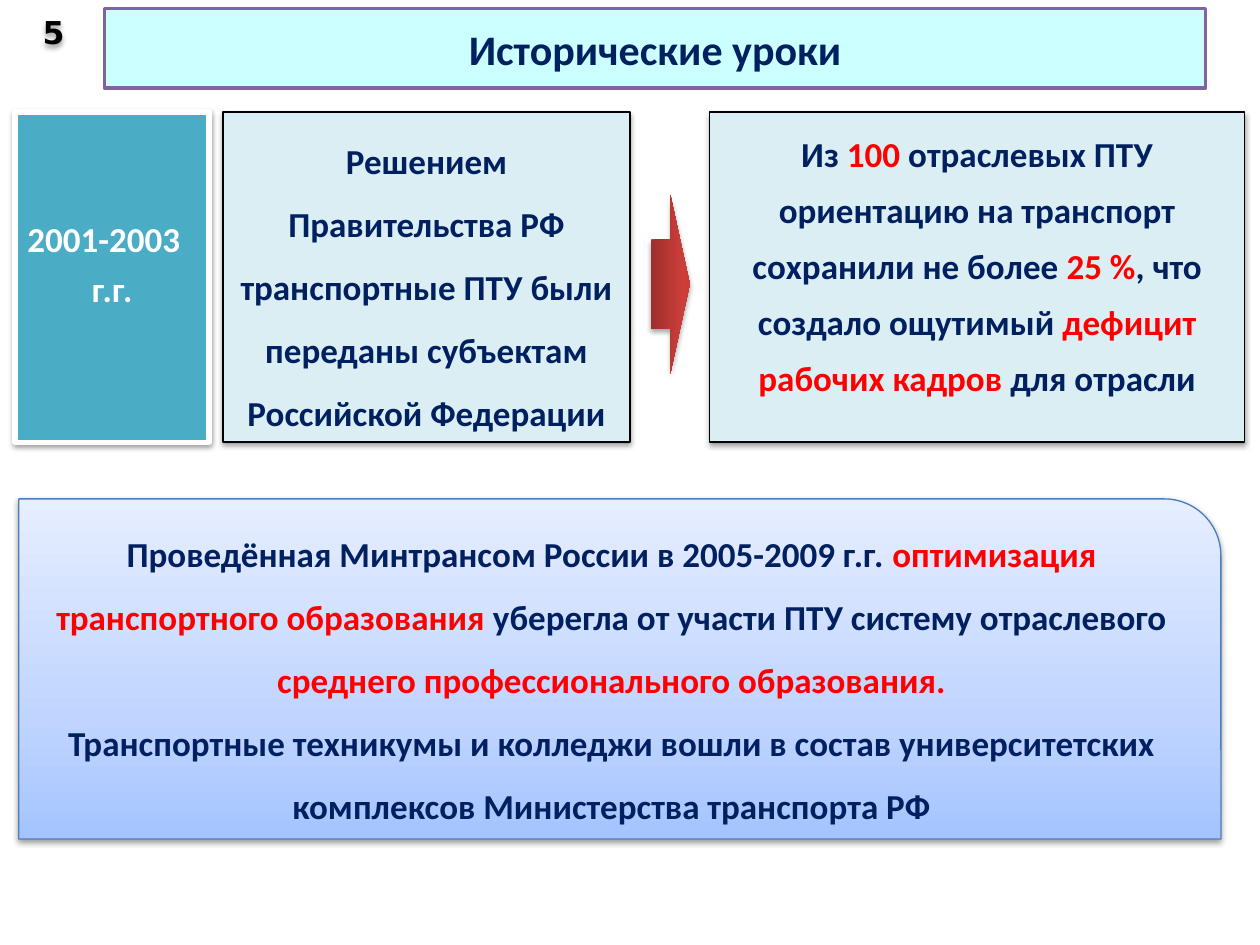
from lxml.etree import SubElement
from pptx import Presentation
from pptx.dml.color import RGBColor
from pptx.enum.shapes import MSO_SHAPE as Shape
from pptx.enum.text import MSO_ANCHOR as Anchor, PP_ALIGN as Align
from pptx.oxml.ns import qn
from pptx.util import Inches, Pt

THEME = {
    "font": "Calibri", "number_font": "DejaVu Sans",
    "title_size": 24, "body_size": 20, "number_size": 18,
    "navy": "002060", "red": "FF0000", "white": "FFFFFF", "black": "000000",
    "title_fill": "CCFFFF", "title_line": "8064A2",
    "year_fill": "4BACC6", "card_fill": "DBEEF4", "summary_line": "4B7EBC",
    "summary_fill": [(0, "A4C4FF"), (35, "BFD4FF"), (100, "E6EEFF")],
    "arrow_fill": [(0, "9C2F2D"), (80, "CB3E3A"), (100, "CE3B37")],
}
WIDTH, HEIGHT = 10, 7.5

COLUMNS = {
    "number": (1.9, 4.7), "title": (8.3, 87.4), "years": (1.2, 15.4),
    "decision": (17.7, 32.3), "arrow": (46.1, 14.2), "outcome": (56.3, 42.5),
    "summary": (1.5, 95.4),
}
ROWS = {
    "number": (0.93, 4.93), "title": (0.93, 8.4), "cards": (11.87, 34.93),
    "arrow": (28, 4.13), "summary": (52.8, 36),
}

TITLE = [[("Исторические уроки", "navy")]]
YEARS = [[("2001-2003", "white")], [("г.г.", "white")]]
DECISION = [[("Решением Правительства РФ транспортные ПТУ были переданы "
              "субъектам Российской Федерации", "navy")]]
OUTCOME = [
    [("Из ", "navy"), ("100 ", "red"),
     ("отраслевых ПТУ ориентацию на транспорт", "navy")],
    [("сохранили не более ", "navy"), ("25 %", "red"),
     (", что создало ощутимый ", "navy"),
     ("дефицит рабочих кадров ", "red"), ("для отрасли", "navy")],
]
SUMMARY = [
    [("Проведённая Минтрансом России в 2005-2009 г.г. ", "navy"),
     ("оптимизация транспортного образования ", "red"),
     ("уберегла от участи ПТУ систему отраслевого ", "navy"),
     ("среднего профессионального образования.", "red")],
    [("Транспортные техникумы и колледжи вошли в состав университетских "
      "комплексов Министерства транспорта РФ", "navy")],
]
NUMBER = [[("5", "black")]]


def color(name):
    return RGBColor.from_string(THEME[name])


def place(column, row):
    (left, width), (top, height) = COLUMNS[column], ROWS[row]
    return [Inches(share * side / 100) for share, side in
            ((left, WIDTH), (top, HEIGHT), (width, WIDTH), (height, HEIGHT))]


def add_color(parent, value):
    return SubElement(parent, qn("a:srgbClr"), val=value)


def add_shadow(shape, opacity=38, distance=1.6):
    effects = shape._element.spPr.find(qn("a:effectLst"))
    shadow = SubElement(effects, qn("a:outerShdw"), blurRad=str(Pt(3.1)),
                        dist=str(Pt(distance)), dir="5400000", rotWithShape="0")
    SubElement(add_color(shadow, THEME["black"]), qn("a:alpha"),
               val=str(opacity * 1000))


def fill_gradient(shape, stops):
    shape.fill.gradient()
    shape.fill.gradient_angle = 90
    stop_list = shape._element.spPr.find(qn("a:gradFill")).find(qn("a:gsLst"))
    stop_list.clear()
    for position, value in stops:
        add_color(SubElement(stop_list, qn("a:gs"), pos=str(position * 1000)), value)


def add_panel(page, preset, area, fill, line=None, weight=0.75):
    shape = page.shapes.add_shape(preset, *area)
    shape.shadow.inherit = False
    if isinstance(THEME[fill], list):
        fill_gradient(shape, THEME[fill])
    else:
        shape.fill.solid()
        shape.fill.fore_color.rgb = color(fill)
    if line:
        shape.line.color.rgb = color(line)
        shape.line.width = Pt(weight)
    else:
        shape.line.fill.background()
    return shape


def write(shape, paragraphs, size="body_size", font="font",
          anchor=Anchor.TOP, spacing=None):
    box = shape.text_frame
    box.word_wrap = True
    box.vertical_anchor = anchor
    for index, runs in enumerate(paragraphs):
        para = box.add_paragraph() if index else box.paragraphs[0]
        para.alignment = Align.CENTER
        if spacing:
            para.line_spacing = spacing
        for text, tint in runs:
            span = para.add_run()
            span.text = text
            span.font.name = THEME[font]
            span.font.size = Pt(THEME[size])
            span.font.bold = True
            span.font.color.rgb = color(tint)
    return box


def main():
    deck = Presentation()
    deck.slide_width, deck.slide_height = Inches(WIDTH), Inches(HEIGHT)
    page = deck.slides.add_slide(deck.slide_layouts[6])

    title = add_panel(page, Shape.RECTANGLE, place("title", "title"),
                      "title_fill", "title_line", 2)
    box = write(title, TITLE, "title_size", anchor=Anchor.MIDDLE)
    box.margin_left = box.margin_right = Inches(0.06)
    box.margin_top = box.margin_bottom = Inches(0.03)

    years = add_panel(page, Shape.RECTANGLE, place("years", "cards"),
                      "year_fill", "white", 3)
    add_shadow(years)
    box = write(years, YEARS)
    box.margin_top = Inches(0.84)
    box.paragraphs[0].alignment = Align.LEFT
    box.paragraphs[1].space_before = Pt(4)

    for column, paragraphs, spacing in (("decision", DECISION, 1.5),
                                        ("outcome", OUTCOME, Pt(32))):
        card = add_panel(page, Shape.RECTANGLE, place(column, "cards"),
                         "card_fill", "black")
        add_shadow(card)
        write(card, paragraphs, spacing=spacing)

    arrow = add_panel(page, Shape.UP_ARROW, place("arrow", "arrow"), "arrow_fill")
    arrow.rotation = 90
    add_shadow(arrow, 35, 1.8)

    summary = add_panel(page, Shape.ROUND_1_RECTANGLE, place("summary", "summary"),
                        "summary_fill", "summary_line")
    add_shadow(summary)
    write(summary, SUMMARY, anchor=Anchor.MIDDLE, spacing=1.5)

    number = page.shapes.add_textbox(*place("number", "number"))
    number.shadow.inherit = False
    add_shadow(number)
    write(number, NUMBER, "number_size", "number_font", Anchor.MIDDLE)

    deck.save("out.pptx")


if __name__ == "__main__":
    main()
